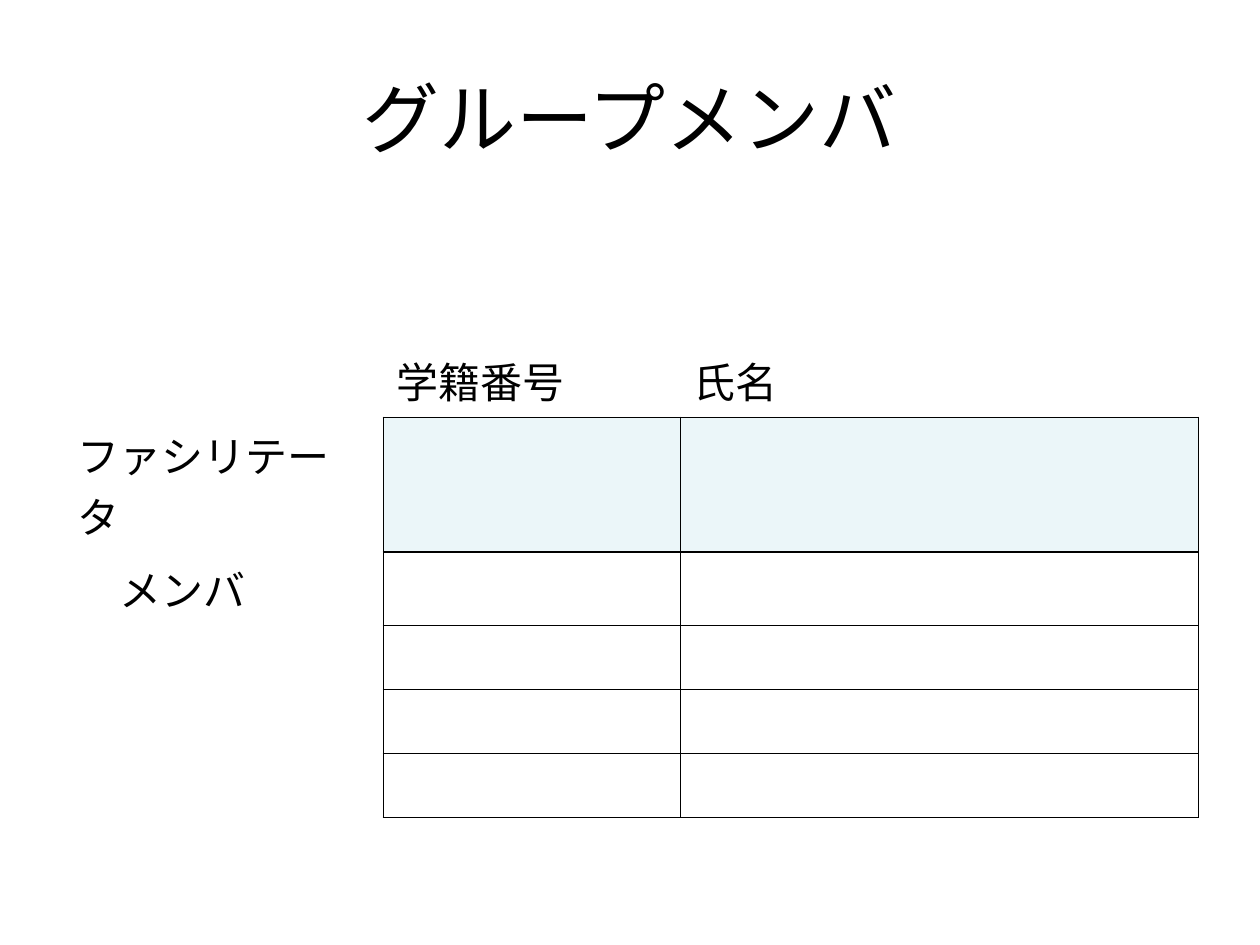
from lxml.etree import SubElement
from pptx import Presentation
from pptx.dml.color import RGBColor
from pptx.enum.text import MSO_ANCHOR, PP_ALIGN
from pptx.oxml.ns import qn
from pptx.util import Cm, Pt

FONT = "Calibri"
BLACK = "000000"
PALE_BLUE = "EBF6F9"
COL_WIDTHS = [6.43, 5.99, 10.44]
ROW_HEIGHTS = [1.48, 2.71, 1.48, 1.29, 1.29, 1.29]
LABELS = {
    (0, 1): "学籍番号",
    (0, 2): "氏名",
    (1, 0): "ファシリテータ",
    (2, 0): " メンバ".replace(" ", "　"),
}


def color(hex_value):
    return RGBColor.from_string(hex_value)


def style_font(font, size):
    font.name = FONT
    font.size = Pt(size)
    font.bold = False
    font.color.rgb = color(BLACK)


def set_borders(cell, sides):
    """Draw a 1 pt black line on the named sides and none on the others."""
    tcPr = cell._tc.get_or_add_tcPr()
    for side in "LRTB":
        ln = SubElement(tcPr, qn(f"a:ln{side}"), w=str(Pt(1)))
        if side in sides:
            fill = SubElement(ln, qn("a:solidFill"))
            SubElement(fill, qn("a:srgbClr"), val=BLACK)
        else:
            SubElement(ln, qn("a:noFill"))


def cell_sides(row, col):
    """Grid lines surround the entry cells, not the row and column labels."""
    if row and col:
        return "LRTB"
    if row:
        return "R"
    return "B" if col else ""


def add_title(slide, text, left, top, width, height):
    title = slide.shapes.title
    title.left, title.top = Cm(left), Cm(top)
    title.width, title.height = Cm(width), Cm(height)
    tf = title.text_frame
    tf.text = text
    tf.vertical_anchor = MSO_ANCHOR.MIDDLE
    p = tf.paragraphs[0]
    p.alignment = PP_ALIGN.CENTER
    style_font(p.runs[0].font, 44)


def add_member_table(slide, left, top):
    frame = slide.shapes.add_table(
        len(ROW_HEIGHTS), len(COL_WIDTHS), Cm(left), Cm(top),
        Cm(sum(COL_WIDTHS)), Cm(sum(ROW_HEIGHTS)))
    table = frame.table
    table.first_row = table.horz_banding = False
    for column, width in zip(table.columns, COL_WIDTHS):
        column.width = Cm(width)
    for r, height in enumerate(ROW_HEIGHTS):
        table.rows[r].height = Cm(height)
        for c in range(len(COL_WIDTHS)):
            cell = table.cell(r, c)
            cell.vertical_anchor = MSO_ANCHOR.MIDDLE
            set_borders(cell, cell_sides(r, c))
            if r == 1 and c:
                cell.fill.solid()
                cell.fill.fore_color.rgb = color(PALE_BLUE)
            else:
                cell.fill.background()
            p = cell.text_frame.paragraphs[0]
            if (r, c) in LABELS:
                p.text = LABELS[r, c]
                style_font(p.runs[0].font, 24)
            else:
                SubElement(p._p, qn("a:endParaRPr"), sz="2400")


def main():
    prs = Presentation()
    prs.slide_width, prs.slide_height = Cm(25.4), Cm(19.05)
    slide = prs.slides.add_slide(prs.slide_layouts[5])
    add_title(slide, "グループメンバ", 1.27, 0.76, 22.86, 3.18)
    add_member_table(slide, 1.3, 6.93)
    prs.save("out.pptx")


if __name__ == "__main__":
    main()
